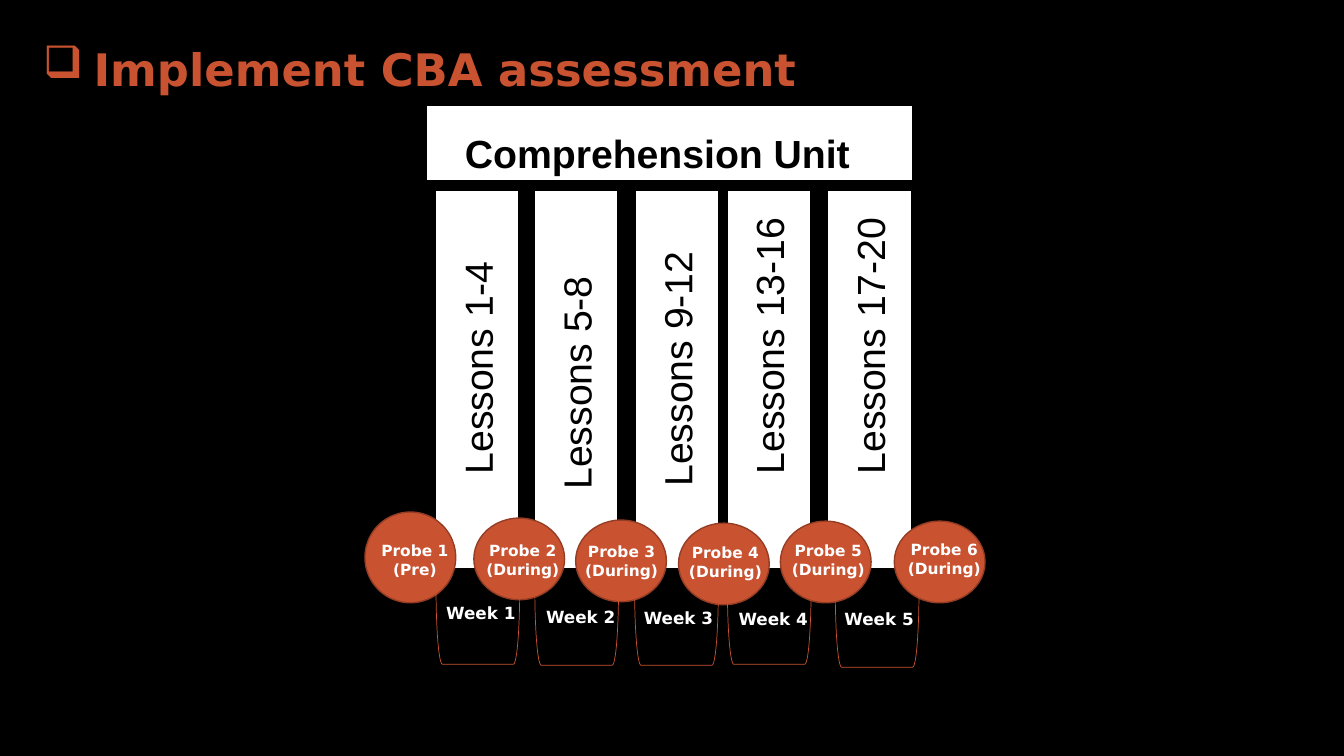
from lxml.etree import SubElement
from pptx import Presentation
from pptx.dml.color import RGBColor
from pptx.enum.shapes import MSO_SHAPE
from pptx.enum.text import MSO_ANCHOR, PP_ALIGN
from pptx.oxml.ns import qn
from pptx.util import Inches, Pt

COLORS = {"black": "000000", "white": "FFFFFF", "rust": "C95331", "brown": "953D24"}
SANS, ARIAL = "DejaVu Sans", "Arial"

TITLE = "Implement CBA assessment"
UNIT = "Comprehension Unit"
# label, left of the pillar, middle height of the label
LESSONS = [
    ("Lessons 1-4", 4.32, 2.89),
    ("Lessons 5-8", 5.30, 3.04),
    ("Lessons 9-12", 6.30, 3.01),
    ("Lessons 13-16", 7.21, 2.89),
    ("Lessons 17-20", 8.21, 2.89),
]
# label, centre and middle of the bracket, centre and top of the label
WEEKS = [
    ("Week 1", 4.74, 6.21, 4.77, 5.93),
    ("Week 2", 5.72, 6.22, 5.76, 5.97),
    ("Week 3", 6.71, 6.22, 6.73, 5.98),
    ("Week 4", 7.63, 6.21, 7.67, 5.99),
    ("Week 5", 8.70, 6.24, 8.72, 5.99),
]
# label, circle left, top and height, label left and top
PROBES = [
    ("Probe 1\n(Pre)", 3.62, 5.08, 0.90, 3.62, 5.32),
    ("Probe 2\n(During)", 4.70, 5.14, 0.81, 4.69, 5.32),
    ("Probe 3\n(During)", 5.71, 5.16, 0.81, 5.67, 5.33),
    ("Probe 4\n(During)", 6.73, 5.19, 0.81, 6.70, 5.34),
    ("Probe 5\n(During)", 7.74, 5.17, 0.81, 7.72, 5.32),
    ("Probe 6\n(During)", 8.87, 5.17, 0.81, 8.87, 5.31),
]
PILLAR_TOP, PILLAR_WIDTH, PILLAR_HEIGHT = 1.89, 0.83, 3.75
LABEL_LENGTH, LABEL_HEIGHT = 3.83, 0.57
BRACKET_DEPTH, WEEK_WIDTH = 0.76, 1.67


def color(name):
    return RGBColor.from_string(COLORS[name])


def add_figure(page, preset, left, top, width, height, fill, line, weight=1):
    figure = page.shapes.add_shape(
        preset, Inches(left), Inches(top), Inches(width), Inches(height))
    figure.shadow.inherit = False
    if fill:
        figure.fill.solid()
        figure.fill.fore_color.rgb = color(fill)
    else:
        figure.fill.background()
    figure.line.color.rgb = color(line)
    figure.line.width = Pt(weight)
    return figure


def add_label(page, text, left, top, width, height, size, font, ink,
              bold=True, align=PP_ALIGN.CENTER):
    box = page.shapes.add_textbox(
        Inches(left), Inches(top), Inches(width), Inches(height))
    box.text_frame.word_wrap = True
    box.text_frame.text = text
    for para in box.text_frame.paragraphs:
        para.alignment = align
        for span in para.runs:
            span.font.size = Pt(size)
            span.font.name = font
            span.font.bold = bold
            span.font.color.rgb = color(ink)
    return box


def add_title(page):
    box = add_label(page, TITLE, 0.33, 0.25, 12.67, 0.8, 32, SANS, "rust",
                    align=PP_ALIGN.LEFT)
    box.text_frame.vertical_anchor = MSO_ANCHOR.MIDDLE
    para = box.text_frame.paragraphs[0]
    para.line_spacing = 1.1
    properties = para._p.get_or_add_pPr()
    properties.set("marL", str(Inches(0.5)))
    properties.set("indent", str(Inches(-0.5)))
    SubElement(properties, qn("a:buChar")).set("char", "❑")


def add_pillars(page):
    for text, left, middle in LESSONS:
        add_figure(page, MSO_SHAPE.RECTANGLE, left, PILLAR_TOP, PILLAR_WIDTH,
                   PILLAR_HEIGHT, "white", "black")
        center = left + PILLAR_WIDTH / 2
        label = add_label(page, text, center - LABEL_LENGTH / 2,
                          middle - LABEL_HEIGHT / 2, LABEL_LENGTH, LABEL_HEIGHT,
                          28, ARIAL, "black", False, PP_ALIGN.LEFT)
        label.rotation = 270


def add_weeks(page):
    for text, center, middle, label_center, label_top in WEEKS:
        bracket = add_figure(page, MSO_SHAPE.LEFT_BRACKET,
                             center - BRACKET_DEPTH / 2, middle - PILLAR_WIDTH / 2,
                             BRACKET_DEPTH, PILLAR_WIDTH, None, "rust", 0.5)
        bracket.rotation = 270
        add_label(page, text, label_center - WEEK_WIDTH / 2, label_top,
                  WEEK_WIDTH, 0.3, 12, SANS, "white")


def main():
    deck = Presentation()
    deck.slide_width, deck.slide_height = Inches(13.33), Inches(7.5)
    page = deck.slides.add_slide(deck.slide_layouts[6])
    page.background.fill.solid()
    page.background.fill.fore_color.rgb = color("black")

    add_title(page)
    add_figure(page, MSO_SHAPE.RECTANGLE, 4.23, 1.04, 4.82, 0.75, "white", "black")
    add_label(page, UNIT, 3.27, 1.23, 6.5, LABEL_HEIGHT, 28, ARIAL, "black")
    add_pillars(page)
    for _, left, top, height, _, _ in PROBES:
        add_figure(page, MSO_SHAPE.OVAL, left, top, 0.9, height, "rust", "brown")
    add_weeks(page)
    for text, _, _, _, left, top in PROBES:
        add_label(page, text, left, top, 0.99, 0.48, 11, SANS, "white")
    deck.save("out.pptx")


if __name__ == "__main__":
    main()
